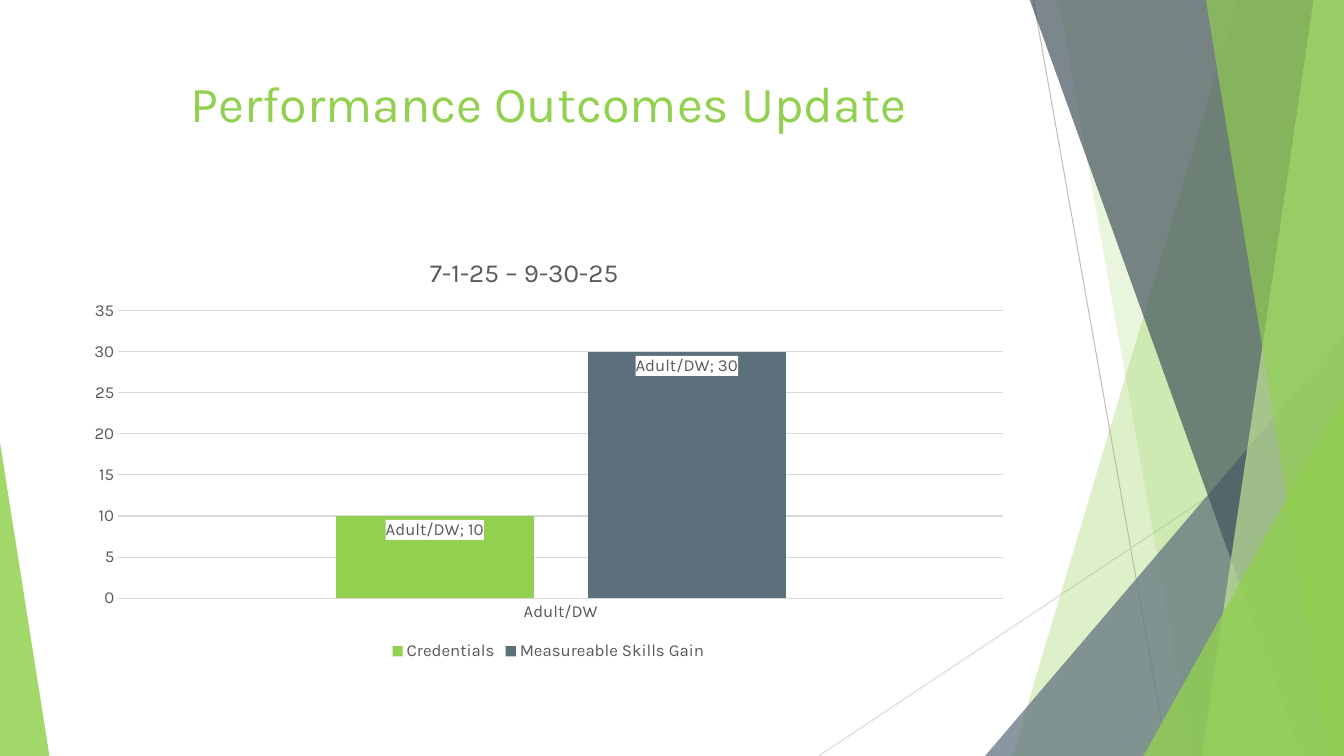
from dataclasses import dataclass

from lxml import etree
from pptx import Presentation
from pptx.chart.data import CategoryChartData
from pptx.dml.color import RGBColor
from pptx.enum.chart import XL_CHART_TYPE, XL_LABEL_POSITION, XL_LEGEND_POSITION, XL_TICK_MARK
from pptx.enum.shapes import MSO_CONNECTOR, MSO_SHAPE
from pptx.enum.text import MSO_ANCHOR, MSO_AUTO_SIZE, PP_ALIGN
from pptx.oxml.ns import qn
from pptx.util import Inches, Pt

COLUMN_CLUSTERED = XL_CHART_TYPE.COLUMN_CLUSTERED
INSIDE_END = XL_LABEL_POSITION.INSIDE_END
LEGEND_BOTTOM = XL_LEGEND_POSITION.BOTTOM
NO_TICK = XL_TICK_MARK.NONE
STRAIGHT = MSO_CONNECTOR.STRAIGHT
TRIANGLE = MSO_SHAPE.ISOSCELES_TRIANGLE
TOP = MSO_ANCHOR.TOP
NO_AUTOFIT = MSO_AUTO_SIZE.NONE
CENTER = PP_ALIGN.CENTER

GREEN = RGBColor(0x92, 0xD0, 0x50)
PALE_GREEN = RGBColor(0xBE, 0xE3, 0x96)
SLATE = RGBColor(0x5C, 0x70, 0x7C)
DARK_SLATE = RGBColor(0x45, 0x54, 0x5D)
TEXT_GRAY = RGBColor(0x59, 0x59, 0x59)
RULE_GRAY = RGBColor(0xBF, 0xBF, 0xBF)
GRID_GRAY = RGBColor(0xD9, 0xD9, 0xD9)
BLACK = RGBColor(0, 0, 0)
WHITE = RGBColor(0xFF, 0xFF, 0xFF)

FONT = "Karla"
SLIDE_WIDTH, SLIDE_HEIGHT = 13.33, 7.5
BAND_TOP = -0.01
CONTENT_LEFT, CONTENT_WIDTH = 0.74, 9.4


@dataclass(frozen=True)
class Ray:
    start: tuple[float, float]
    end: tuple[float, float]
    color: RGBColor


@dataclass(frozen=True)
class Band:
    top_left: float
    bottom_left: float
    color: RGBColor
    opacity: int


@dataclass(frozen=True)
class Wedge:
    left: float
    top: float
    width: float
    apex: float
    color: RGBColor
    opacity: int


@dataclass(frozen=True)
class Outcome:
    name: str
    count: int
    color: RGBColor


DECORATION = [
    Ray((10.25, 0), (11.58, 7.5), RULE_GRAY),
    Ray((13.33, 4.03), (8.12, 7.5), GRID_GRAY),
    Band(12.28, 10.04, GREEN, 30),
    Band(10.5, 11.83, GREEN, 20),
    Wedge(9.77, 3.33, 3.56, 1, SLATE, 72),
    Band(10.21, 12.91, DARK_SLATE, 70),
    Band(13.03, 11.92, PALE_GREEN, 70),
    Band(11.96, 13.18, GREEN, 65),
    Wedge(11.34, 3.93, 1.99, 1, GREEN, 80),
    Wedge(0, 4.39, 0.49, 0, GREEN, 85),
]

OUTCOMES = [
    Outcome("Credentials", 10, GREEN),
    Outcome("Measureable Skills Gain", 30, SLATE),
]


def paint(shape, color: RGBColor, opacity: int) -> None:
    shape.shadow.inherit = False
    shape.fill.solid()
    shape.fill.fore_color.rgb = color
    shape.line.fill.background()
    tint = shape._element.find(".//" + qn("a:srgbClr"))
    etree.SubElement(tint, qn("a:alpha"), val=str(opacity * 1000))


def draw_ray(shapes, ray: Ray) -> None:
    ends = [Inches(value) for value in ray.start + ray.end]
    connector = shapes.add_connector(STRAIGHT, *ends)
    connector.line.color.rgb = ray.color
    connector.line.width = Pt(0.75)
    etree.SubElement(connector._element.spPr, qn("a:effectLst"))


def draw_band(shapes, band: Band) -> None:
    corners = [
        (band.top_left, BAND_TOP),
        (SLIDE_WIDTH, BAND_TOP),
        (SLIDE_WIDTH, SLIDE_HEIGHT),
        (band.bottom_left, SLIDE_HEIGHT),
    ]
    first, *others = [(Inches(x), Inches(y)) for x, y in corners]
    outline = shapes.build_freeform(*first)
    outline.add_line_segments(others, close=True)
    paint(outline.convert_to_shape(), band.color, band.opacity)


def draw_wedge(shapes, wedge: Wedge) -> None:
    triangle = shapes.add_shape(
        TRIANGLE, Inches(wedge.left), Inches(wedge.top),
        Inches(wedge.width), Inches(SLIDE_HEIGHT - wedge.top))
    triangle.adjustments[0] = wedge.apex
    paint(triangle, wedge.color, wedge.opacity)


def style_font(font, size: float, color: RGBColor) -> None:
    font.name = FONT
    font.size = Pt(size)
    font.bold = False
    font.color.rgb = color


def set_layout(parent, index: int, **settings: str | float) -> None:
    for old_layout in parent.findall(qn("c:layout")):
        parent.remove(old_layout)
    layout = etree.Element(qn("c:layout"))
    manual = etree.SubElement(layout, qn("c:manualLayout"))
    for tag, value in settings.items():
        etree.SubElement(manual, qn(f"c:{tag}"), val=str(value))
    parent.insert(index, layout)


def label_series(series) -> None:
    labels = series.data_labels
    labels.show_value = True
    labels.show_category_name = True
    labels.position = INSIDE_END
    style_font(labels.font, 12, TEXT_GRAY)
    element = labels._element
    backing = etree.Element(qn("c:spPr"))
    fill = etree.SubElement(backing, qn("a:solidFill"))
    etree.SubElement(fill, qn("a:srgbClr"), val=str(WHITE))
    element.find(qn("c:txPr")).addprevious(backing)
    separator = etree.Element(qn("c:separator"))
    separator.text = "; "
    element.find(qn("c:showBubbleSize")).addnext(separator)


def add_title(slide) -> None:
    title = slide.shapes.title
    title.left, title.top = Inches(CONTENT_LEFT), Inches(0.67)
    title.width, title.height = Inches(CONTENT_WIDTH), Inches(1.44)
    frame = title.text_frame
    frame.word_wrap = True
    frame.auto_size = NO_AUTOFIT
    frame.vertical_anchor = TOP
    heading = frame.paragraphs[0]
    heading.alignment = CENTER
    run = heading.add_run()
    run.text = "Performance Outcomes Update"
    style_font(run.font, 36, GREEN)


def add_outcomes_chart(slide) -> None:
    data = CategoryChartData()
    data.categories = ["Adult/DW"]
    for outcome in OUTCOMES:
        data.add_series(outcome.name, [outcome.count])
    chart = slide.shapes.add_chart(
        COLUMN_CLUSTERED, Inches(CONTENT_LEFT), Inches(2.36),
        Inches(CONTENT_WIDTH), Inches(4.24), data).chart
    style_font(chart.font, 10, BLACK)

    chart.has_title = True
    period = chart.chart_title.text_frame.paragraphs[0].add_run()
    period.text = "7-1-25 – 9-30-25"
    style_font(period.font, 18.6, TEXT_GRAY)
    set_layout(chart.chart_title._element, 1, xMode="edge", yMode="edge", x=0.37, y=0.03)
    set_layout(chart._chartSpace.find(".//" + qn("c:plotArea")), 0,
               layoutTarget="inner", xMode="edge", yMode="edge",
               x=0.046, y=0.171, w=0.934, h=0.672)

    for axis in (chart.category_axis, chart.value_axis):
        axis.major_tick_mark = NO_TICK
        axis.minor_tick_mark = NO_TICK
        style_font(axis.tick_labels.font, 12, TEXT_GRAY)
    counts = chart.value_axis
    counts.minimum_scale, counts.maximum_scale, counts.major_unit = 0, 35, 5
    counts.format.line.fill.background()
    for rule in (chart.category_axis.format.line, counts.major_gridlines.format.line):
        rule.color.rgb = GRID_GRAY
        rule.width = Pt(0.75)

    chart.has_legend = True
    chart.legend.position = LEGEND_BOTTOM
    chart.legend.include_in_layout = False
    style_font(chart.legend.font, 12, TEXT_GRAY)

    columns = chart.plots[0]
    columns.gap_width, columns.overlap = 219, -27
    columns.vary_by_categories = False
    for series, outcome in zip(columns.series, OUTCOMES):
        series.format.fill.solid()
        series.format.fill.fore_color.rgb = outcome.color
        label_series(series)


def main() -> None:
    deck = Presentation()
    deck.slide_width, deck.slide_height = Inches(SLIDE_WIDTH), Inches(SLIDE_HEIGHT)
    slide = deck.slides.add_slide(deck.slide_layouts[5])
    painters = {Ray: draw_ray, Band: draw_band, Wedge: draw_wedge}
    for part in DECORATION:
        painters[type(part)](slide.shapes, part)
    add_title(slide)
    add_outcomes_chart(slide)
    deck.save("out.pptx")


if __name__ == "__main__":
    main()
